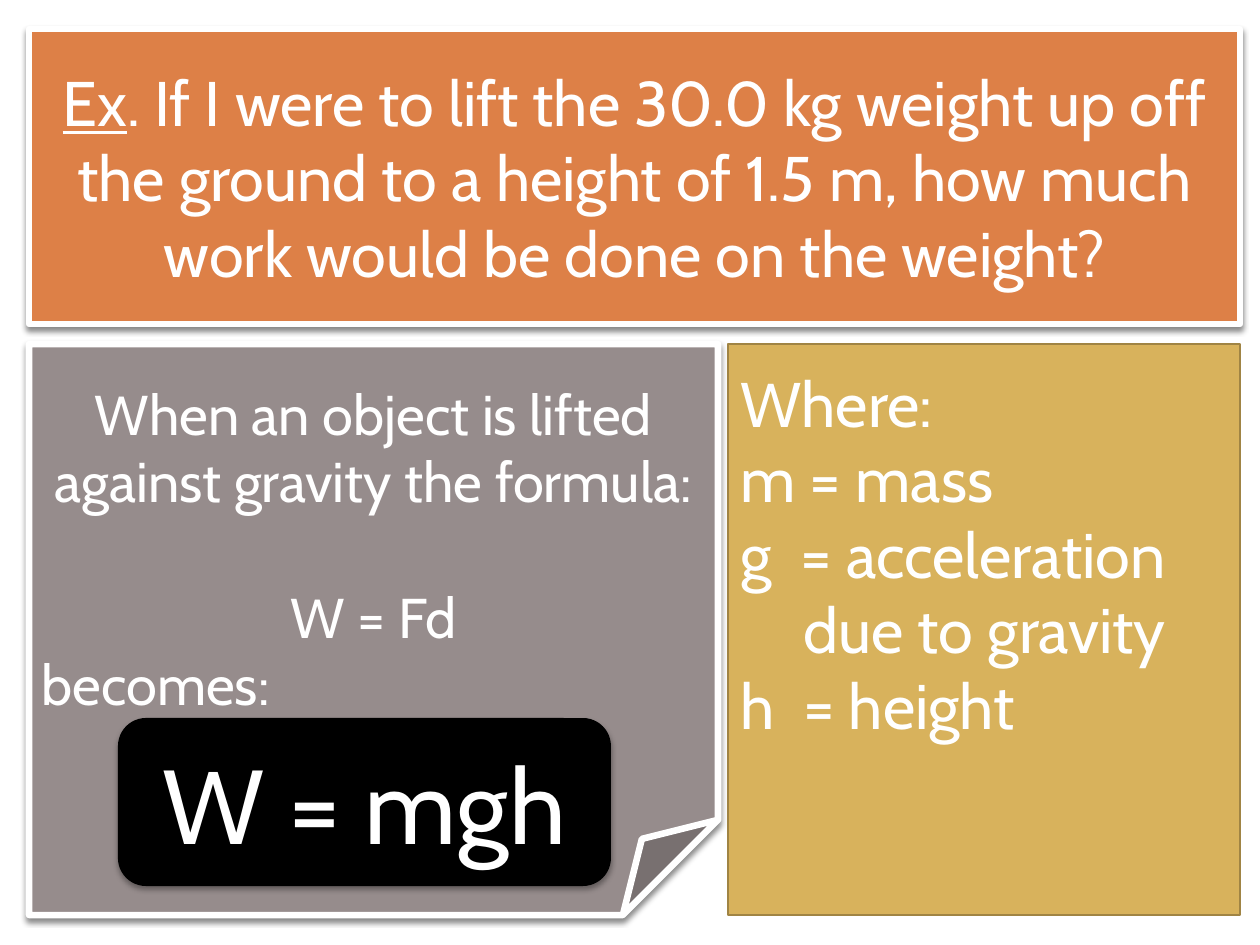
from dataclasses import dataclass
from typing import Optional

import lxml.etree
import pptx
import pptx.dml.color
import pptx.enum.shapes
import pptx.enum.text
import pptx.oxml
import pptx.oxml.ns
import pptx.util

PX_PER_INCH = 126
SHAPE = pptx.enum.shapes.MSO_SHAPE
ALIGN = pptx.enum.text.PP_ALIGN
ANCHOR = pptx.enum.text.MSO_ANCHOR
NS = 'xmlns:a="http://schemas.openxmlformats.org/drawingml/2006/main"'


@dataclass(frozen=True)
class Theme:
    font: str = "Cabin"
    text: str = "FFFFFF"
    border: str = "FFFFFF"
    question: str = "DD8047"
    page: str = "968C8C"
    formula: str = "000000"
    legend: str = "D8B25C"
    legend_border: str = "A08444"
    body_size: int = 32
    large_size: int = 36
    formula_size: int = 60


@dataclass(frozen=True)
class Run:
    text: str
    underline: bool = False
    break_before: bool = False


@dataclass(frozen=True)
class Para:
    runs: tuple[Run, ...]
    align: ALIGN = ALIGN.LEFT
    before: float = 0


@dataclass(frozen=True)
class Panel:
    box: tuple[int, int, int, int]
    fill: str
    size: int
    paras: tuple[Para, ...]
    border: Optional[str] = None
    border_pt: float = 0
    shadow_alpha: int = 0
    shadow_dist: float = 0
    anchor: ANCHOR = ANCHOR.MIDDLE
    inset_top: int = 6
    inset_bottom: int = 6


THEME = Theme()


def px(n: int) -> pptx.util.Emu:
    return pptx.util.Emu(round(n * 914400 / PX_PER_INCH))


def rgb(value: str) -> pptx.dml.color.RGBColor:
    return pptx.dml.color.RGBColor.from_string(value)


def line(text: str, align: ALIGN = ALIGN.LEFT, before: float = 0) -> Para:
    return Para((Run(text),), align, before)


def set_geometry(sp, preset: str) -> None:
    """Give a placeholder a preset outline; call after it is placed, before it is filled."""
    sp._element.spPr.append(pptx.oxml.parse_xml(
        f'<a:prstGeom {NS} prst="{preset}"><a:avLst/></a:prstGeom>'))


def add_shadow(sp, alpha: int, dist: float) -> None:
    effects = sp._element.spPr.find(pptx.oxml.ns.qn("a:effectLst"))
    effects.append(pptx.oxml.parse_xml(
        f'<a:outerShdw {NS} blurRad="{pptx.util.Pt(3)}" dist="{pptx.util.Pt(dist)}" '
        f'dir="5400000" rotWithShape="0"><a:srgbClr val="000000">'
        f'<a:alpha val="{alpha * 1000}"/></a:srgbClr></a:outerShdw>'))


def place(sp, box: tuple[int, int, int, int]) -> None:
    sp.left, sp.top, sp.width, sp.height = map(px, box)


def write(sp, panel: Panel) -> None:
    tf = sp.text_frame
    tf.word_wrap = True
    tf.auto_size = pptx.enum.text.MSO_AUTO_SIZE.NONE
    tf.vertical_anchor = panel.anchor
    tf.margin_left = tf.margin_right = pptx.util.Inches(0.1)
    tf.margin_top, tf.margin_bottom = px(panel.inset_top), px(panel.inset_bottom)
    for i, para in enumerate(panel.paras):
        p = tf.add_paragraph() if i else tf.paragraphs[0]
        p.alignment = para.align
        p.line_spacing = 1.0
        p.space_before, p.space_after = pptx.util.Pt(para.before), pptx.util.Pt(0)
        pPr = p._p.get_or_add_pPr()
        pPr.set("marL", "0")
        pPr.set("indent", "0")
        lxml.etree.SubElement(pPr, pptx.oxml.ns.qn("a:buNone"))
        for run in para.runs:
            if run.break_before:
                p.add_line_break()
            r = p.add_run()
            r.text = run.text
            r.font.name = THEME.font
            r.font.size = pptx.util.Pt(panel.size)
            r.font.color.rgb = rgb(THEME.text)
            r.font.underline = run.underline


def dress(sp, panel: Panel) -> None:
    """Apply fill, border, shadow and text to a placed shape."""
    sp.fill.solid()
    sp.fill.fore_color.rgb = rgb(panel.fill)
    if panel.border:
        sp.line.color.rgb = rgb(panel.border)
        sp.line.width = pptx.util.Pt(panel.border_pt)
    else:
        sp.line.fill.background()
    sp.shadow.inherit = False
    if panel.shadow_alpha:
        add_shadow(sp, panel.shadow_alpha, panel.shadow_dist)
    write(sp, panel)


def fill_placeholder(sp, preset: str, panel: Panel) -> None:
    place(sp, panel.box)
    set_geometry(sp, preset)
    dress(sp, panel)


def add_panel(s, kind: SHAPE, panel: Panel) -> None:
    dress(s.shapes.add_shape(kind, *map(px, panel.box)), panel)


QUESTION = Panel(
    (29, 29, 1211, 295), THEME.question, THEME.large_size,
    (Para((Run("Ex", underline=True),
           Run(". If I were to lift the 30.0 kg weight up off the ground to a "
               "height of 1.5 m, how much work would be done on the weight?")),
          ALIGN.CENTER),),
    THEME.border, 3.75, 45, 2.4)

LEGEND = Panel(
    (728, 344, 512, 571), THEME.legend, THEME.large_size,
    (line("Where:"),
     line("m = mass"),
     Para((Run("g  = acceleration"), Run("\tdue to gravity", break_before=True))),
     line("h  = height")),
    THEME.legend_border, 1.5, anchor=ANCHOR.TOP, inset_top=20)

EXPLANATION = Panel(
    (29, 344, 689, 571), THEME.page, THEME.body_size,
    (line("When an object is lifted against gravity the formula:", ALIGN.CENTER),
     line("W = Fd", ALIGN.CENTER, before=39),
     line("becomes:")),
    THEME.border, 3.75, 45, 2.4, inset_bottom=74)

FORMULA = Panel(
    (118, 718, 493, 168), THEME.formula, THEME.formula_size,
    (line("W = mgh", ALIGN.CENTER),), shadow_alpha=35, shadow_dist=2)


def main() -> None:
    prs = pptx.Presentation()
    prs.slide_width, prs.slide_height = pptx.util.Inches(10), pptx.util.Inches(7.5)
    s = prs.slides.add_slide(prs.slide_layouts[1])
    fill_placeholder(s.shapes.title, "roundRect", QUESTION)
    fill_placeholder(s.placeholders[1], "rect", LEGEND)
    add_panel(s, SHAPE.FOLDED_CORNER, EXPLANATION)
    add_panel(s, SHAPE.ROUNDED_RECTANGLE, FORMULA)
    prs.save("out.pptx")


if __name__ == "__main__":
    main()
